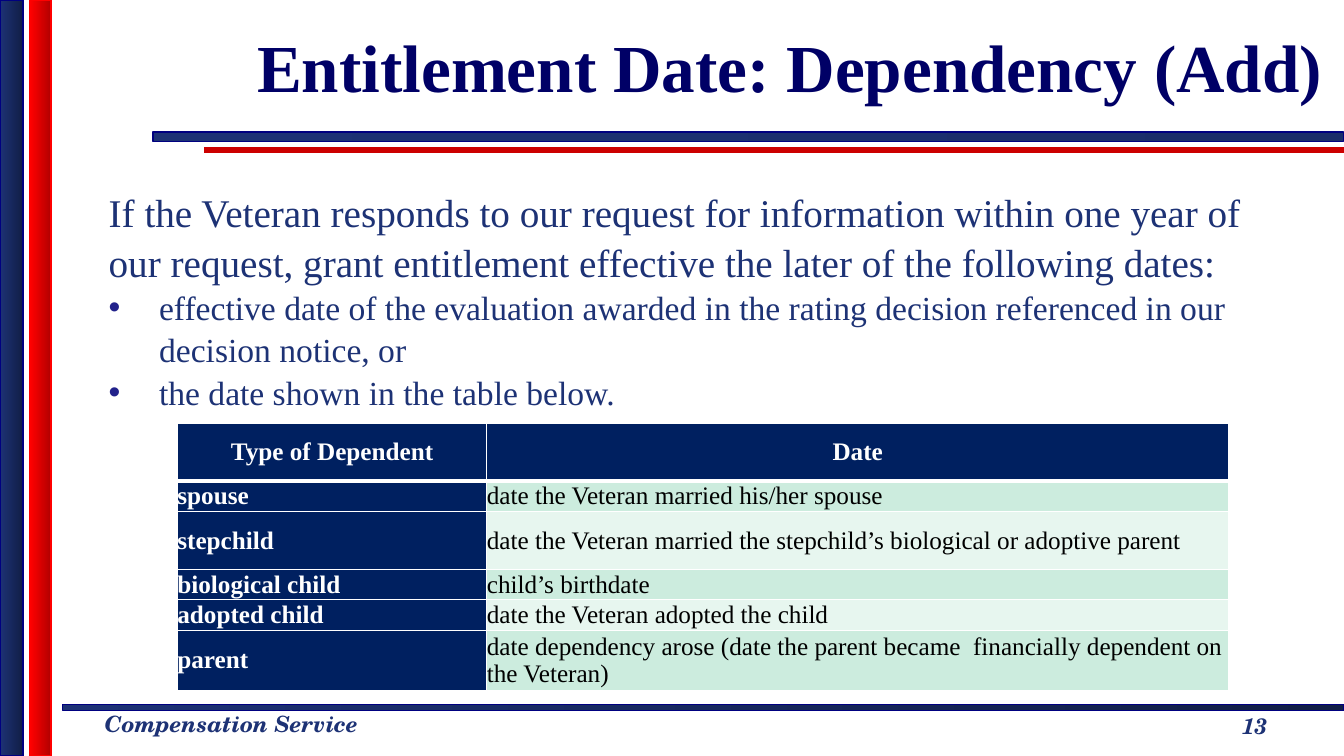
from typing import NamedTuple

from lxml.etree import SubElement
from pptx import Presentation
from pptx.dml.color import RGBColor
from pptx.enum.shapes import MSO_CONNECTOR, MSO_SHAPE
from pptx.enum.text import MSO_ANCHOR as Anchor, MSO_AUTO_SIZE as AutoSize, PP_ALIGN as Align
from pptx.oxml.ns import qn
from pptx.util import Cm, Pt

COLORS = {
    "navy": "1D3275", "navy_mid": "1A2D69", "navy_dark": "111E46", "edge": "000080",
    "red": "FF0000", "red_dark": "B20000", "rule": "CC0000", "title": "000066",
    "bullet": "22228B", "header": "002060", "mint": "CCECDE", "pale": "E7F6EF",
    "white": "FFFFFF", "black": "000000",
}
SERIF = "Times New Roman"
FOOTER = {"name": "TeX Gyre Schola", "size": Pt(16), "bold": True, "italic": True}


class Bar(NamedTuple):
    left: float
    top: float
    width: float
    height: float
    start: str
    end: str
    edge: str


class Line(NamedTuple):
    text: str
    size: int
    bulleted: bool


class Dependent(NamedTuple):
    kind: str
    date: str
    height: float


BARS = [
    Bar(1.57, 17.75, 32.3, 0.15, "navy", "navy_dark", "edge"),
    Bar(3.86, 3.33, 30.0, 0.23, "navy", "navy_mid", "edge"),
    Bar(0, 0, 0.58, 19.05, "navy", "navy_dark", "edge"),
    Bar(0.76, 0, 0.53, 19.05, "red", "red_dark", "red"),
]
BODY = [
    Line("If the Veteran responds to our request for information within one year of our "
         "request, grant entitlement effective the later of the following dates:", 28, False),
    Line("effective date of the evaluation awarded in the rating decision referenced in our "
         "decision notice, or", 24, True),
    Line("the date shown in the table below.", 24, True),
]
DEPENDENTS = [
    Dependent("Type of Dependent", "Date", 1.45),
    Dependent("spouse", "date the Veteran married his/her spouse", 0.73),
    Dependent("stepchild", "date the Veteran married the stepchild’s biological or adoptive parent", 1.47),
    Dependent("biological child", "child’s birthdate", 0.73),
    Dependent("adopted child", "date the Veteran adopted the child", 0.73),
    Dependent("parent", "date dependency arose (date the parent became  financially dependent on "
              "the Veteran)", 1.47),
]


def rgb(name: str) -> RGBColor:
    return RGBColor.from_string(COLORS[name])


def set_font(font, color: str, values: dict) -> None:
    for key, value in values.items():
        setattr(font, key, value)
    font.color.rgb = rgb(color)


def draw_bar(shapes, bar: Bar) -> None:
    sp = shapes.add_shape(MSO_SHAPE.RECTANGLE, *(Cm(v) for v in bar[:4]))
    sp.shadow.inherit = False
    sp.fill.gradient()
    sp.fill.gradient_angle = 0
    for stop, color in zip(sp.fill.gradient_stops, (bar.start, bar.end)):
        stop.color.rgb = rgb(color)
    sp.line.color.rgb = rgb(bar.edge)
    sp.line.width = Pt(1)


def draw_rule(shapes) -> None:
    rule = shapes.add_connector(MSO_CONNECTOR.STRAIGHT, Cm(5.15), Cm(3.78), Cm(33.87), Cm(3.78))
    rule.line.color.rgb = rgb("rule")
    rule.line.width = Pt(4)
    SubElement(rule._element.spPr, qn("a:effectLst"))


def add_text(shapes, left: float, top: float, width: float, height: float):
    tf = shapes.add_textbox(Cm(left), Cm(top), Cm(width), Cm(height)).text_frame
    tf.word_wrap = True
    return tf


def add_bullet(p) -> None:
    pPr = p._p.get_or_add_pPr()
    pPr.set("marL", str(Cm(1.27)))
    pPr.set("indent", str(-Cm(1.27)))
    color = SubElement(pPr, qn("a:buClr"))
    SubElement(color, qn("a:srgbClr"), val=COLORS["bullet"])
    SubElement(pPr, qn("a:buFont"), typeface="Arial")
    SubElement(pPr, qn("a:buChar"), char="•")


def add_title(shapes) -> None:
    title = shapes.title
    box = {"left": Cm(5.94), "top": Cm(0), "width": Cm(27.94), "height": Cm(3.3)}
    for key, value in box.items():
        setattr(title, key, value)
    tf = title.text_frame
    tf.text = "Entitlement Date: Dependency (Add)"
    tf.auto_size = AutoSize.NONE
    tf.vertical_anchor = Anchor.MIDDLE
    p = tf.paragraphs[0]
    p.alignment = Align.CENTER
    set_font(p.runs[0].font, "title", {"name": SERIF, "size": Pt(48), "bold": True})


def add_body(shapes) -> None:
    tf = add_text(shapes, 2.49, 4.57, 30.25, 12.12)
    for i, line in enumerate(BODY):
        p = tf.add_paragraph() if i else tf.paragraphs[0]
        p.line_spacing = 1.05
        if line.bulleted:
            add_bullet(p)
        r = p.add_run()
        r.text = line.text
        set_font(r.font, "navy", {"name": SERIF, "size": Pt(line.size)})


def add_footer(shapes) -> None:
    service = add_text(shapes, 2.39, 17.78, 7.16, 0.94)
    service.word_wrap = False
    number = add_text(shapes, 29.36, 17.65, 4.52, 1.27)
    number.vertical_anchor = Anchor.MIDDLE
    number.paragraphs[0].alignment = Align.CENTER
    for tf, text in ((service, "Compensation Service"), (number, "13")):
        r = tf.paragraphs[0].add_run()
        r.text = text
        set_font(r.font, "navy", FOOTER)


def set_borders(tcPr, bottom: int, top: int) -> None:
    """Put white borders before the fill, as the schema orders them."""
    widths = {"lnL": 1, "lnR": 1, "lnT": top, "lnB": bottom}
    for i, (side, width) in enumerate(widths.items()):
        ln = SubElement(tcPr, qn(f"a:{side}"), w=str(Pt(width)))
        fill = SubElement(ln, qn("a:solidFill"))
        SubElement(fill, qn("a:srgbClr"), val=COLORS["white"])
        tcPr.insert(i, ln)


def fill_cell(cell, text: str, row: int, col: int) -> None:
    dark = row == 0 or col == 0
    for side in ("left", "right", "top", "bottom"):
        setattr(cell, f"margin_{side}", 0)
    cell.vertical_anchor = Anchor.MIDDLE
    cell.fill.solid()
    cell.fill.fore_color.rgb = rgb("header" if dark else "mint" if row % 2 else "pale")
    set_borders(cell._tc.get_or_add_tcPr(), 3 if row == 0 else 1, 3 if row == 1 else 1)
    p = cell.text_frame.paragraphs[0]
    p.alignment = Align.LEFT if row else Align.CENTER
    r = p.add_run()
    r.text = text
    set_font(r.font, "white" if dark else "black", {"name": SERIF, "size": Pt(18), "bold": dark})


def add_dependents(shapes) -> None:
    height = sum(d.height for d in DEPENDENTS)
    table = shapes.add_table(len(DEPENDENTS), 2, Cm(4.47), Cm(10.67), Cm(26.49), Cm(height)).table
    for column, width in zip(table.columns, (7.8, 18.69)):
        column.width = Cm(width)
    for row, dependent in enumerate(DEPENDENTS):
        table.rows[row].height = Cm(dependent.height)
        for col, text in enumerate((dependent.kind, dependent.date)):
            fill_cell(table.cell(row, col), text, row, col)


def main() -> None:
    prs = Presentation()
    prs.slide_width, prs.slide_height = Cm(33.87), Cm(19.05)
    shapes = prs.slides.add_slide(prs.slide_layouts[5]).shapes
    draw_rule(shapes)
    for bar in BARS:
        draw_bar(shapes, bar)
    add_title(shapes)
    add_body(shapes)
    add_footer(shapes)
    add_dependents(shapes)
    prs.save("out.pptx")


if __name__ == "__main__":
    main()
